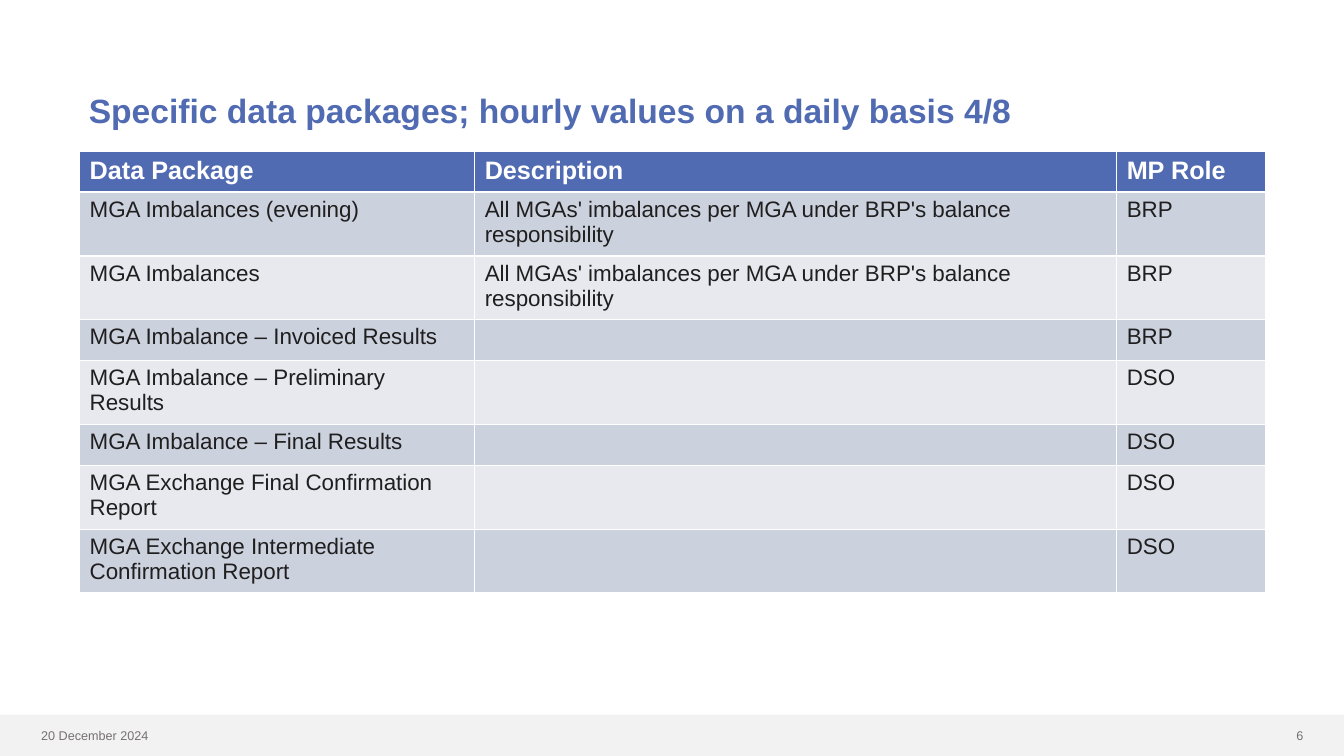
from pptx import Presentation
from pptx.dml.color import RGBColor
from pptx.enum.shapes import MSO_SHAPE
from pptx.enum.text import MSO_ANCHOR, PP_ALIGN
from pptx.util import Pt

BLUE = RGBColor(0x51, 0x6B, 0xB3)
WHITE = RGBColor(0xFF, 0xFF, 0xFF)
INK = RGBColor(0x20, 0x1F, 0x1F)
GREY = RGBColor(0x76, 0x71, 0x71)
FOOTER_GREY = RGBColor(0xF2, 0xF2, 0xF2)
BAND_DARK = RGBColor(0xCC, 0xD1, 0xDE)
BAND_LIGHT = RGBColor(0xE7, 0xE9, 0xEF)


def write(frame, text, size, color, bold=False, align=PP_ALIGN.LEFT):
    para = frame.paragraphs[0]
    para.alignment = align
    span = para.add_run()
    span.text = text
    span.font.name = "Arial"
    span.font.size = Pt(size)
    span.font.bold = bold
    span.font.color.rgb = color


deck = Presentation()
deck.slide_width = Pt(960)
deck.slide_height = Pt(540)
page = deck.slides.add_slide(deck.slide_layouts[5])

footer = page.shapes.add_shape(MSO_SHAPE.RECTANGLE, Pt(0), Pt(510.5), Pt(960), Pt(29.5))
footer.shadow.inherit = False
footer.fill.solid()
footer.fill.fore_color.rgb = FOOTER_GREY
footer.line.fill.background()

footer_texts = [
    ("6", 879, 59, PP_ALIGN.RIGHT),
    ("20 December 2024", 22.3, 152.6, PP_ALIGN.LEFT),
]
for text, left, width, align in footer_texts:
    box = page.shapes.add_textbox(Pt(left), Pt(516.2), Pt(width), Pt(18))
    box.text_frame.word_wrap = True
    write(box.text_frame, text, 9, GREY, align=align)

title = page.shapes.title
title.left, title.top, title.width, title.height = Pt(56.2), Pt(28), Pt(844.6), Pt(104.4)
title.text_frame.vertical_anchor = MSO_ANCHOR.MIDDLE
title.text_frame.paragraphs[0].line_spacing = 0.9
write(title.text_frame, "Specific data packages; hourly values on a daily basis 4/8", 24, BLUE, bold=True)

imbalances = "All MGAs' imbalances per MGA under BRP's balance responsibility"
rows = [
    ("Data Package", "Description", "MP Role"),
    ("MGA Imbalances (evening)", imbalances, "BRP"),
    ("MGA Imbalances", imbalances, "BRP"),
    ("MGA Imbalance – Invoiced Results", "", "BRP"),
    ("MGA Imbalance – Preliminary Results", "", "DSO"),
    ("MGA Imbalance – Final Results", "", "DSO"),
    ("MGA Exchange Final Confirmation Report", "", "DSO"),
    ("MGA Exchange Intermediate Confirmation Report", "", "DSO"),
]
widths = [282.2, 458.6, 106.6]
table = page.shapes.add_table(
    len(rows), len(widths), Pt(56.9), Pt(108), Pt(sum(widths)), Pt(29.2 * len(rows))
).table
for column, width in zip(table.columns, widths):
    column.width = Pt(width)

for index, texts in enumerate(rows):
    header = index == 0
    band = BLUE if header else BAND_DARK if index % 2 else BAND_LIGHT
    for cell, text in zip(table.rows[index].cells, texts):
        cell.fill.solid()
        cell.fill.fore_color.rgb = band
        if text:
            write(cell.text_frame, text, 18 if header else 16, WHITE if header else INK, bold=header)

deck.save("out.pptx")
